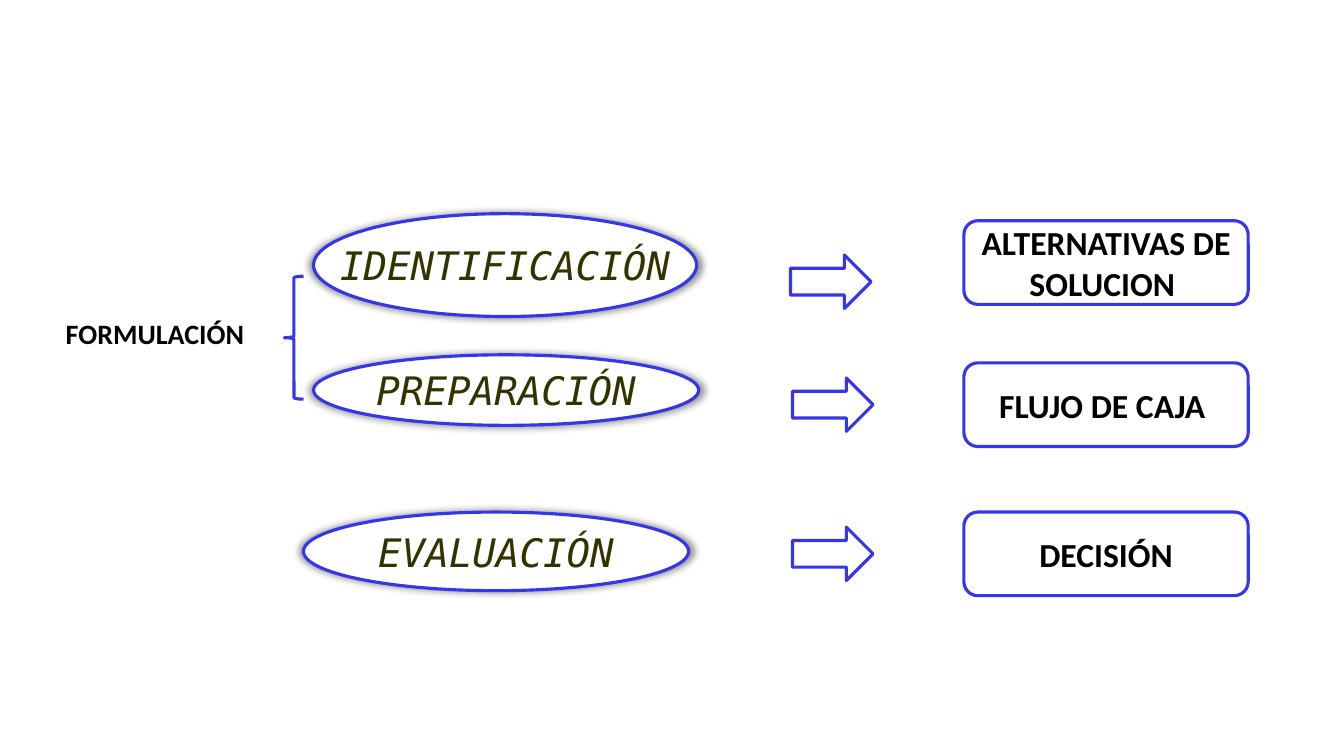
import dataclasses

import lxml.etree
import pptx
import pptx.dml.color
import pptx.enum.shapes
import pptx.enum.text
import pptx.oxml.ns
import pptx.shapes.autoshape
import pptx.shapes.base
import pptx.slide
import pptx.util

Inches = pptx.util.Inches
ShapeType = pptx.enum.shapes.MSO_SHAPE

COLORS = {"paper": "FFFFFF", "outline": "3437E9", "phase": "333300", "label": "000000"}
PHASE_FONT = "DejaVu Sans Mono"
LABEL_FONT = "Calibri"
OUTLINE_WIDTH = 2.25
ARROW_SIZE = (0.8, 0.53)
RESULT_LEFT = 9.56
RESULT_SIZE = (2.82, 0.83)


@dataclasses.dataclass(frozen=True)
class Box:
    left: float
    top: float
    width: float
    height: float


@dataclasses.dataclass(frozen=True)
class Stage:
    phase: str
    oval: Box
    arrow_left: float
    arrow_top: float
    result: str
    result_top: float


STAGES = [
    Stage("IDENTIFICACIÓN", Box(3.11, 2.12, 3.8, 1.02), 7.84, 2.53,
          "ALTERNATIVAS DE SOLUCION ", 2.19),
    Stage("PREPARACIÓN", Box(3.11, 3.52, 3.82, 0.7), 7.86, 3.75, "FLUJO DE CAJA ", 3.6),
    Stage("EVALUACIÓN", Box(3.01, 5.08, 3.82, 0.78), 7.86, 5.23, "DECISIÓN", 5.08),
]
FORMULATION_LABEL = Box(0.47, 2.67, 2.19, 1.28)
FORMULATION_BRACE = Box(2.82, 2.74, 0.19, 1.22)


def rgb(name: str) -> pptx.dml.color.RGBColor:
    return pptx.dml.color.RGBColor.from_string(COLORS[name])


def lengths(box: Box) -> list[pptx.util.Length]:
    return [Inches(value) for value in dataclasses.astuple(box)]


def write_text(shape: pptx.shapes.base.BaseShape, text: str, *, size: float,
               font: str = LABEL_FONT, color: str = "label", bold: bool = False,
               italic: bool = False, wrap: bool = True) -> None:
    frame = shape.text_frame
    frame.word_wrap = wrap
    frame.vertical_anchor = pptx.enum.text.MSO_ANCHOR.MIDDLE
    paragraph = frame.paragraphs[0]
    paragraph.alignment = pptx.enum.text.PP_ALIGN.CENTER
    run = paragraph.add_run()
    run.text = text
    run.font.name = font
    run.font.size = pptx.util.Pt(size)
    run.font.bold = bold
    run.font.italic = italic
    run.font.color.rgb = rgb(color)


def add_outlined(slide: pptx.slide.Slide, kind: ShapeType, box: Box,
                 filled: bool = True) -> pptx.shapes.autoshape.Shape:
    shape = slide.shapes.add_shape(kind, *lengths(box))
    shape.shadow.inherit = False
    if filled:
        shape.fill.solid()
        shape.fill.fore_color.rgb = rgb("paper")
    else:
        shape.fill.background()
    shape.line.color.rgb = rgb("outline")
    shape.line.width = pptx.util.Pt(OUTLINE_WIDTH)
    return shape


def add_halo(shape: pptx.shapes.autoshape.Shape) -> None:
    """Surround the shape with a soft, centred grey shadow."""
    qn = pptx.oxml.ns.qn
    effects = shape.element.spPr.find(qn("a:effectLst"))
    shadow = lxml.etree.SubElement(effects, qn("a:outerShdw"), blurRad="63500",
                                   sx="102000", sy="102000", algn="ctr",
                                   rotWithShape="0")
    color = lxml.etree.SubElement(shadow, qn("a:srgbClr"), val=COLORS["label"])
    lxml.etree.SubElement(color, qn("a:alpha"), val="40000")


def add_stage(slide: pptx.slide.Slide, stage: Stage) -> None:
    oval = add_outlined(slide, ShapeType.OVAL, stage.oval)
    add_halo(oval)
    write_text(oval, stage.phase, size=28, font=PHASE_FONT, color="phase",
               italic=True, wrap=False)
    add_outlined(slide, ShapeType.RIGHT_ARROW,
                 Box(stage.arrow_left, stage.arrow_top, *ARROW_SIZE))
    result = add_outlined(slide, ShapeType.FLOWCHART_ALTERNATE_PROCESS,
                          Box(RESULT_LEFT, stage.result_top, *RESULT_SIZE))
    write_text(result, stage.result, size=24, bold=True)


def add_formulation(slide: pptx.slide.Slide) -> None:
    label = slide.shapes.add_textbox(*lengths(FORMULATION_LABEL))
    write_text(label, "FORMULACIÓN", size=20, bold=True)
    write_text(label, " ", size=18, bold=True)
    add_outlined(slide, ShapeType.LEFT_BRACE, FORMULATION_BRACE, filled=False)


def main() -> None:
    presentation = pptx.Presentation()
    presentation.slide_width = Inches(13.33)
    presentation.slide_height = Inches(7.5)
    slide = presentation.slides.add_slide(presentation.slide_layouts[6])
    for stage in STAGES:
        add_stage(slide, stage)
    add_formulation(slide)
    presentation.save("out.pptx")


if __name__ == "__main__":
    main()
